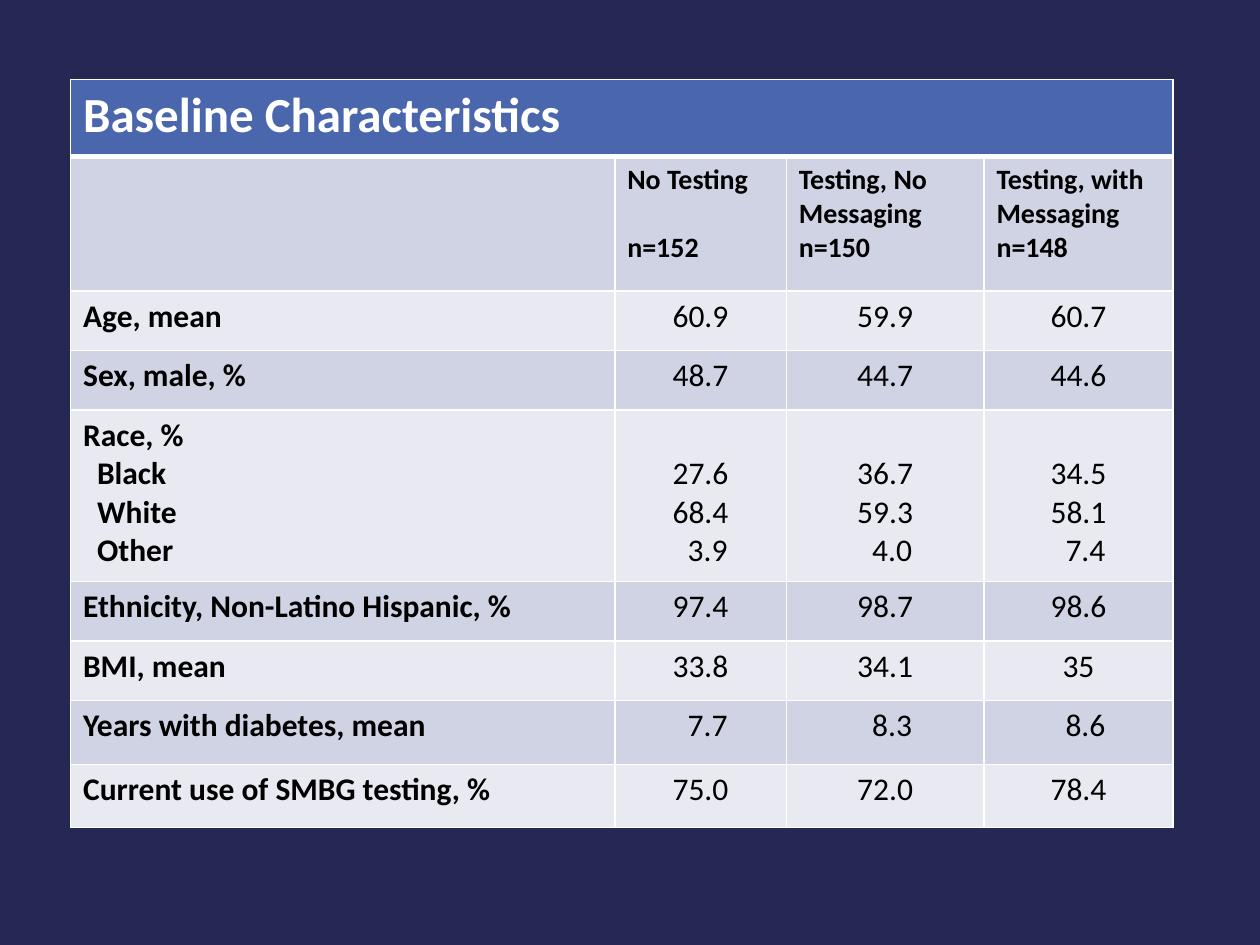
from lxml import etree
from pptx import Presentation
from pptx.dml.color import RGBColor
from pptx.enum import text
from pptx.oxml.ns import qn
from pptx.util import Pt

HUES = {"back": "242852", "head": "4A66AC", "dark": "D0D3E3",
        "light": "E9EAF1", "white": "FFFFFF", "black": "000000"}
FONT = "Calibri"
COLS = [311, 98, 113, 108]
ROWS = [44, 77, 34, 34, 98, 34, 34, 36.5, 36]
LINE = 1.22  # line height as a share of the type size

TITLE = "Baseline Characteristics"
ARMS = ["", "No Testing\nn=152", "Testing, No Messaging\nn=150",
        "Testing, with Messaging\nn=148"]
DATA = [
    ["Age, mean", "60.9", "59.9", "60.7"],
    ["Sex, male, %", "48.7", "44.7", "44.6"],
    ["Race, %\nBlack\nWhite\nOther", "27.6\n68.4\n3.9",
     "36.7\n59.3\n4.0", "34.5\n58.1\n7.4"],
    ["Ethnicity, Non-Latino Hispanic, %", "97.4", "98.7", "98.6"],
    ["BMI, mean", "33.8", "34.1", "35"],
    ["Years with diabetes, mean", "7.7", "8.3", "8.6"],
    ["Current use of SMBG testing, %", "75.0", "72.0", "78.4"],
]


def color(name):
    return RGBColor.from_string(HUES[name])


def border(cell, top=1, low=1):
    props = cell._tc.get_or_add_tcPr()
    for side, width in (("L", 1), ("R", 1), ("T", top), ("B", low)):
        line = etree.SubElement(props, qn("a:ln" + side), w=str(Pt(width)))
        fill = etree.SubElement(line, qn("a:solidFill"))
        etree.SubElement(fill, qn("a:srgbClr"), val=HUES["white"])


def paint(cell, hue, top=1, low=1):
    border(cell, top, low)
    cell.fill.solid()
    cell.fill.fore_color.rgb = color(hue)


def write(cell, words, size, bold=True, hue="black"):
    cell.text_frame.text = words
    for para in cell.text_frame.paragraphs:
        for run in para.runs:
            font = run.font
            font.name, font.size, font.bold = FONT, Pt(size), bold
            font.color.rgb = color(hue)


def indent(para):
    para._p.get_or_add_pPr().set("marL", str(Pt(8)))


def label(cell, words):
    write(cell, words, 18)
    for para in cell.text_frame.paragraphs[1:]:
        indent(para)


def values(cell, words):
    write(cell, words, 18, bold=False)
    for para in cell.text_frame.paragraphs:
        para.alignment = text.PP_ALIGN.CENTER
        if float(para.text) < 10:
            indent(para)
    # Grouped values start one line down, beside the first group name
    if "\n" in words:
        cell.margin_top = Pt(3.6 + 18 * LINE)


def grid(slide):
    frame = slide.shapes.add_table(len(ROWS), len(COLS), Pt(40.3), Pt(45.4),
                                   Pt(sum(COLS)), Pt(sum(ROWS)))
    table = frame.table
    for col, width in zip(table.columns, COLS):
        col.width = Pt(width)
    for row, height in zip(table.rows, ROWS):
        row.height = Pt(height)
    return table


def main():
    deck = Presentation()
    deck.slide_width, deck.slide_height = Pt(720), Pt(540)
    slide = deck.slides.add_slide(deck.slide_layouts[6])
    slide.background.fill.solid()
    slide.background.fill.fore_color.rgb = color("back")
    table = grid(slide)

    # Title row across all columns
    for cell in table.rows[0].cells:
        paint(cell, "head", low=3)
    table.cell(0, 0).merge(table.cell(0, len(COLS) - 1))
    write(table.cell(0, 0), TITLE, 28, hue="white")

    # Study arms
    for cell, words in zip(table.rows[1].cells, ARMS):
        paint(cell, "dark", top=3)
        write(cell, words, 16)
    # The one-line name leaves room to level its count with the others
    table.cell(1, 1).text_frame.paragraphs[1].space_before = Pt(16 * LINE)

    # Measures in alternating bands
    for r, line in enumerate(DATA, 2):
        for c, words in enumerate(line):
            cell = table.cell(r, c)
            paint(cell, "dark" if r % 2 else "light")
            (values if c else label)(cell, words)

    deck.save("out.pptx")


if __name__ == "__main__":
    main()
